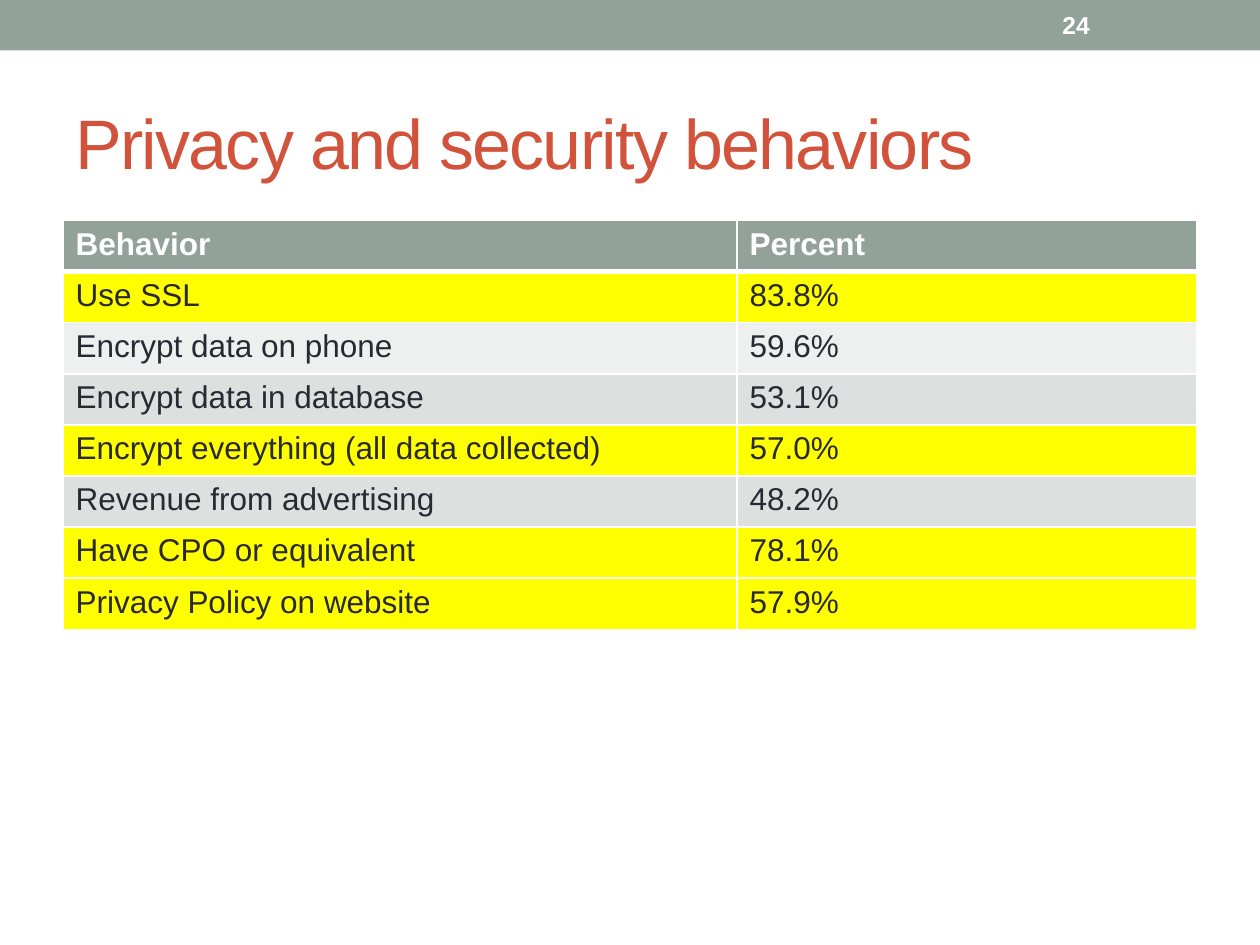
from lxml.etree import SubElement
from pptx import Presentation
from pptx.dml.color import RGBColor
from pptx.enum.shapes import MSO_SHAPE
from pptx.enum.text import MSO_ANCHOR
from pptx.oxml.ns import qn
from pptx.util import Pt

FONT = "Arial"
SAGE, RED, WHITE, INK = "93A299", "D2533C", "FFFFFF", "292934"
HIGHLIGHT, BANDS = "FFFF00", ("EEF0EF", "DCE0DE")
HEADINGS = ("Behavior", "Percent")
# Behavior, percent, highlighted
BEHAVIORS = [
    ("Use SSL", "83.8%", True),
    ("Encrypt data on phone", "59.6%", False),
    ("Encrypt data in database", "53.1%", False),
    ("Encrypt everything (all data collected)", "57.0%", True),
    ("Revenue from advertising", "48.2%", False),
    ("Have CPO or equivalent", "78.1%", True),
    ("Privacy Policy on website", "57.9%", True),
]


def color(value):
    return RGBColor.from_string(value)


def points(box):
    return [Pt(length) for length in box]


def style(para, size, ink, bold=False):
    font = para.font
    font.name, font.size, font.bold = FONT, Pt(size), bold
    font.color.rgb = color(ink)


def add_text(page, box, text, size, ink, bold=False):
    frame = page.shapes.add_textbox(*points(box)).text_frame
    frame.word_wrap = True
    frame.vertical_anchor = MSO_ANCHOR.MIDDLE
    para = frame.paragraphs[0]
    span = para.add_run()
    span.text = text
    style(para, size, ink, bold)
    return span


def add_top_band(page, box, number):
    band = page.shapes.add_shape(MSO_SHAPE.RECTANGLE, *points(box))
    band.shadow.inherit = False
    band.fill.solid()
    band.fill.fore_color.rgb = color(SAGE)
    band.line.fill.background()
    left, top, width, height = box
    add_text(page, (left + width - 120, top + 1.4, 84, height - 2.8), number, 14, WHITE, True)


def add_title(page, box, text):
    span = add_text(page, box, text, 40, RED)
    span.font.size = Pt(40)
    span.font._element.set("spc", "-100")  # tighten letters by one point


def set_borders(cell, top, bottom):
    properties = cell._tc.get_or_add_tcPr()
    for side, width in (("L", 1), ("R", 1), ("T", top), ("B", bottom)):
        line = SubElement(properties, qn(f"a:ln{side}"), w=str(Pt(width)))
        fill = SubElement(line, qn("a:solidFill"))
        SubElement(fill, qn("a:srgbClr"), val=WHITE)


def add_behavior_table(page, box):
    rows = len(BEHAVIORS) + 1
    table = page.shapes.add_table(rows, 2, *points(box)).table
    table.columns[0].width = Pt(385.2)
    table.columns[1].width = Pt(box[2] - 385.2)
    for index in range(rows):
        table.rows[index].height = Pt(box[3] / rows)
        if index == 0:
            texts, fill = HEADINGS, SAGE
        else:
            *texts, highlighted = BEHAVIORS[index - 1]
            fill = HIGHLIGHT if highlighted else BANDS[index % 2]
        for column, text in enumerate(texts):
            cell = table.cell(index, column)
            # A heavier rule separates the heading from the rows
            set_borders(cell, 3 if index == 1 else 1, 3 if index == 0 else 1)
            cell.fill.solid()
            cell.fill.fore_color.rgb = color(fill)
            cell.text = text
            style(cell.text_frame.paragraphs[0], 18, INK if index else WHITE, index == 0)


def main():
    deck = Presentation()
    deck.slide_width, deck.slide_height = Pt(720), Pt(540)
    page = deck.slides.add_slide(deck.slide_layouts[6])
    add_top_band(page, (0, 0, 720, 28.8), "24")
    add_title(page, (36, 42, 648, 78), "Privacy and security behaviors")
    add_behavior_table(page, (36, 126, 648, 233.6))
    deck.save("out.pptx")


if __name__ == "__main__":
    main()
